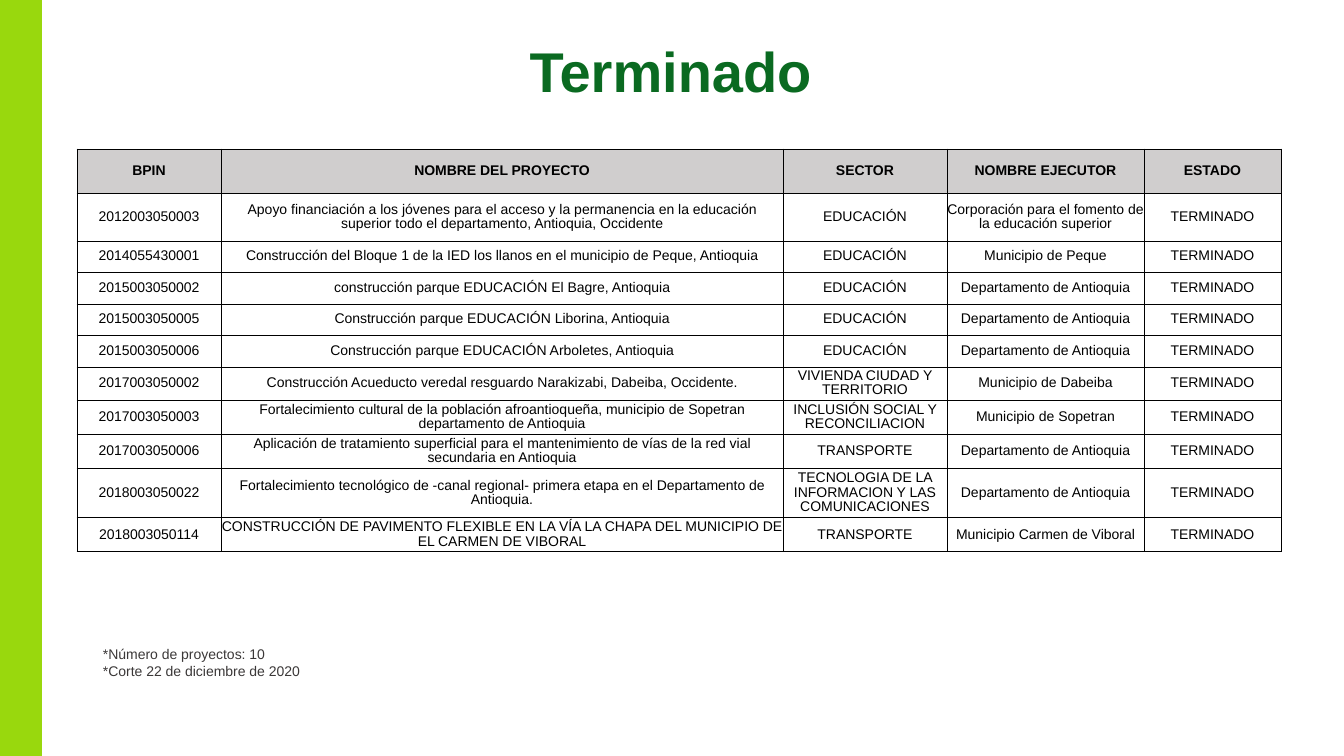
from dataclasses import dataclass

from lxml.etree import SubElement
from pptx import Presentation
from pptx.dml.color import RGBColor
from pptx.enum.shapes import MSO_SHAPE
from pptx.enum.text import MSO_ANCHOR, PP_ALIGN
from pptx.oxml.ns import qn
from pptx.util import Emu, Pt

# Content
TITLE = "Terminado"
NOTES = ["*Número de proyectos: 10", "*Corte 22 de diciembre de 2020"]
HEADER = ("BPIN", "NOMBRE DEL PROYECTO", "SECTOR", "NOMBRE EJECUTOR", "ESTADO")
STATUS = "TERMINADO"
PROJECTS = [
    ("2012003050003",
     "Apoyo financiación a los jóvenes para el acceso y la permanencia en la educación "
     "superior todo el departamento, Antioquia, Occidente",
     "EDUCACIÓN", "Corporación para el fomento de la educación superior"),
    ("2014055430001",
     "Construcción del Bloque 1 de la IED los llanos en el municipio de Peque, Antioquia",
     "EDUCACIÓN", "Municipio de Peque"),
    ("2015003050002", "construcción parque EDUCACIÓN El Bagre, Antioquia",
     "EDUCACIÓN", "Departamento de Antioquia"),
    ("2015003050005", "Construcción parque EDUCACIÓN Liborina, Antioquia",
     "EDUCACIÓN", "Departamento de Antioquia"),
    ("2015003050006", "Construcción parque EDUCACIÓN Arboletes, Antioquia",
     "EDUCACIÓN", "Departamento de Antioquia"),
    ("2017003050002",
     "Construcción Acueducto veredal resguardo Narakizabi, Dabeiba, Occidente.",
     "VIVIENDA CIUDAD Y TERRITORIO", "Municipio de Dabeiba"),
    ("2017003050003",
     "Fortalecimiento cultural de la población afroantioqueña, municipio de Sopetran "
     "departamento de Antioquia",
     "INCLUSIÓN SOCIAL Y RECONCILIACION", "Municipio de Sopetran"),
    ("2017003050006",
     "Aplicación de tratamiento superficial para el mantenimiento de vías de la red vial "
     "secundaria en Antioquia",
     "TRANSPORTE", "Departamento de Antioquia"),
    ("2018003050022",
     "Fortalecimiento tecnológico de -canal regional- primera etapa en el Departamento de "
     "Antioquia.",
     "TECNOLOGIA DE LA INFORMACION Y LAS COMUNICACIONES", "Departamento de Antioquia"),
    ("2018003050114",
     "CONSTRUCCIÓN DE PAVIMENTO FLEXIBLE EN LA VÍA LA CHAPA DEL MUNICIPIO DE "
     "EL CARMEN DE VIBORAL",
     "TRANSPORTE", "Municipio Carmen de Viboral"),
]

# Layout in px
SLIDE_W, SLIDE_H = 1344, 756
BAR_W = 42
TITLE_BOX = (127, 32, 1087, 78)
NOTES_BOX = (93, 641, 345, 44)
TABLE_LEFT, TABLE_TOP = 77, 149
COL_WIDTHS = [144, 562, 164, 197, 137]
ROW_HEIGHTS = [44, 48, 31, 32, 31, 32, 33, 34, 34, 50, 34]


@dataclass(frozen=True)
class Theme:
    font: str = "Arial"
    title_size: int = 40
    body_size: int = 10
    border_width: float = 0.5
    line_spacing: float = 0.9
    title: str = "0A6A21"
    bar: str = "99D80D"
    notes: str = "3B3838"
    text: str = "000000"
    header_fill: str = "D0CECE"
    row_fill: str = "FFFFFF"


THEME = Theme()


def px(n):
    return Emu(round(n * 914400 / 100.8))


def style(p, size, color, bold=False, align=PP_ALIGN.LEFT):
    p.alignment = align
    p.font.name = THEME.font
    p.font.size = Pt(size)
    p.font.bold = bold
    p.font.color.rgb = RGBColor.from_string(color)


def add_text(s, box, lines, *look):
    tf = s.shapes.add_textbox(*map(px, box)).text_frame
    tf.word_wrap = True
    for i, line in enumerate(lines):
        p = tf.paragraphs[0] if i == 0 else tf.add_paragraph()
        p.text = line
        style(p, *look)


def add_borders(cell):
    tc_pr = cell._tc.get_or_add_tcPr()
    for side in ("a:lnL", "a:lnR", "a:lnT", "a:lnB"):
        ln = SubElement(tc_pr, qn(side), w=str(Pt(THEME.border_width)))
        fill = SubElement(ln, qn("a:solidFill"))
        SubElement(fill, qn("a:srgbClr"), val=THEME.text)


def fill_cell(cell, text, is_header):
    add_borders(cell)
    cell.fill.solid()
    cell.fill.fore_color.rgb = RGBColor.from_string(
        THEME.header_fill if is_header else THEME.row_fill)
    cell.margin_left = cell.margin_right = cell.margin_top = cell.margin_bottom = 0
    cell.vertical_anchor = MSO_ANCHOR.MIDDLE
    p = cell.text_frame.paragraphs[0]
    p.text = text
    p.line_spacing = THEME.line_spacing
    style(p, THEME.body_size, THEME.text, is_header, PP_ALIGN.CENTER)


def add_project_table(s):
    rows = [HEADER] + [project + (STATUS,) for project in PROJECTS]
    table = s.shapes.add_table(
        len(rows), len(HEADER), px(TABLE_LEFT), px(TABLE_TOP),
        px(sum(COL_WIDTHS)), px(sum(ROW_HEIGHTS))).table
    table.horz_banding = False
    for col, width in zip(table.columns, COL_WIDTHS):
        col.width = px(width)
    for r, (row, height) in enumerate(zip(rows, ROW_HEIGHTS)):
        table.rows[r].height = px(height)
        for c, text in enumerate(row):
            fill_cell(table.cell(r, c), text, r == 0)


def main():
    prs = Presentation()
    prs.slide_width, prs.slide_height = px(SLIDE_W), px(SLIDE_H)
    s = prs.slides.add_slide(prs.slide_layouts[6])

    # Title
    add_text(s, TITLE_BOX, [TITLE], THEME.title_size, THEME.title, True, PP_ALIGN.CENTER)

    # Green side bar
    bar = s.shapes.add_shape(MSO_SHAPE.RECTANGLE, 0, 0, px(BAR_W), px(SLIDE_H))
    bar.shadow.inherit = False
    bar.fill.solid()
    bar.fill.fore_color.rgb = RGBColor.from_string(THEME.bar)
    bar.line.fill.background()

    # Notes below the table
    add_text(s, NOTES_BOX, NOTES, THEME.body_size, THEME.notes)

    # Projects
    add_project_table(s)

    prs.save("out.pptx")


if __name__ == "__main__":
    main()
